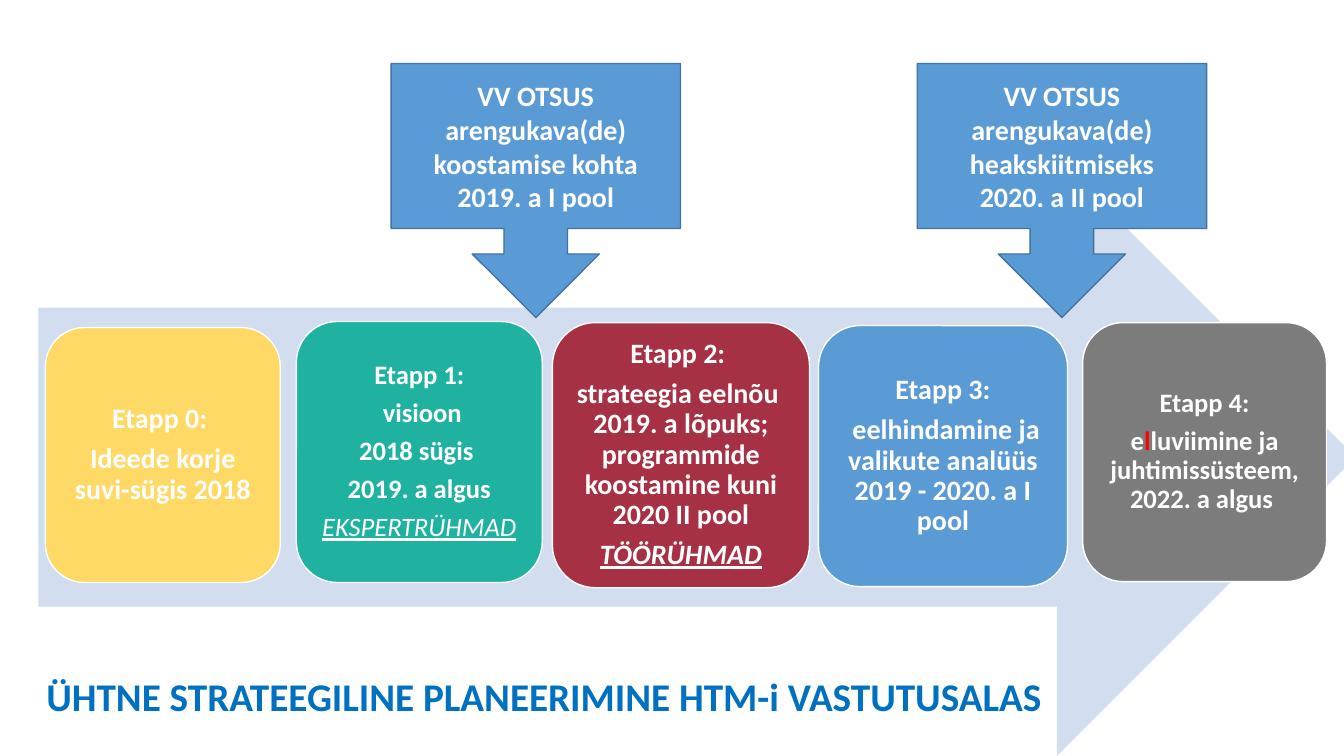
"""Build the slide that shows the stages of strategic planning as one timeline."""
from pptx import Presentation
from pptx.dml.color import RGBColor
from pptx.enum.shapes import MSO_SHAPE
from pptx.enum.text import MSO_ANCHOR, MSO_AUTO_SIZE, PP_ALIGN
from pptx.util import Inches, Pt

COLOURS = {
    "white": "FFFFFF",
    "title": "0070C0",
    "arrow": "D2DEEF",
    "yellow": "FFD966",
    "teal": "20B2A1",
    "crimson": "A63044",
    "blue": "5B9BD5",
    "grey": "7C7C7C",
    "outline": "43739E",
    "red": "FF0000",
}
FONT = "Calibri"
CALLOUT_TOP, CALLOUT_WIDTH, CALLOUT_HEIGHT = 8.4, 21.53, 33.6

STAGES = [
    ("yellow", 20, (3.38, 43.33, 17.48, 33.73),
     ["Etapp 0: ", "Ideede korje suvi-sügis 2018"]),
    ("teal", 19, (22.05, 42.53, 18.3, 34.53),
     ["Etapp 1:", " visioon", "2018 sügis ", "2019. a algus",
      [("EKSPERTRÜHMAD", {"bold": False, "italic": True, "underline": True})]]),
    ("crimson", 20, (41.1, 42.67, 19.13, 35.07),
     ["Etapp 2: ",
      "strateegia eelnõu \n2019. a lõpuks; programmide koostamine kuni 2020 II pool",
      [("TÖÖRÜHMAD", {"italic": True, "underline": True})]]),
    ("blue", 20, (60.9, 43.07, 18.53, 34.53),
     ["Etapp 3:", " eelhindamine ja valikute analüüs 2019 - 2020. a I pool"]),
    ("grey", 19, (80.55, 42.67, 18.15, 34.27),
     ["Etapp 4:",
      [("e", {}), ("l", {"colour": "red"}),
       ("luviimine ja juhtimissüsteem, 2022. a algus ", {})]]),
]
DECISIONS = [
    (68.25, ["VV OTSUS", "arengukava(de) heakskiitmiseks", "2020. a II pool"]),
    (29.1, ["VV OTSUS", "arengukava(de) koostamise kohta 2019. a I pool"]),
]


def add_span(para, text, size=20, colour="white", bold=True, italic=False, underline=False):
    """Append formatted text to a paragraph, with a line break at each newline."""
    for index, line in enumerate(text.split("\n")):
        if index:
            para.add_line_break()
        span = para.add_run()
        span.text = line
        font = span.font
        font.name, font.size = FONT, Pt(size)
        font.bold, font.italic, font.underline = bold, italic, underline
        font.color.rgb = RGBColor.from_string(COLOURS[colour])


class Timeline:
    """Draw on one slide, with places given in percent of its size."""

    def __init__(self, deck):
        """Add a title-only slide to the deck."""
        self.deck = deck
        self.slide = deck.slides.add_slide(deck.slide_layouts[5])

    def place(self, left, top, width, height):
        """Turn percentages into slide lengths."""
        across, down = self.deck.slide_width / 100, self.deck.slide_height / 100
        return [round(length) for length in
                (left * across, top * down, width * across, height * down)]

    def title(self, text, area):
        """Move and format the title placeholder."""
        box = self.slide.shapes.title
        box.left, box.top, box.width, box.height = self.place(*area)
        frame = box.text_frame
        frame.word_wrap = True
        frame.auto_size = MSO_AUTO_SIZE.SHAPE_TO_FIT_TEXT
        frame.vertical_anchor = MSO_ANCHOR.TOP
        para = frame.paragraphs[0]
        para.alignment = PP_ALIGN.LEFT
        add_span(para, text, size=28, colour="title")

    def shape(self, kind, area, fill, line=None):
        """Add a flat preset shape."""
        shape = self.slide.shapes.add_shape(kind, *self.place(*area))
        shape.shadow.inherit = False
        shape.fill.solid()
        shape.fill.fore_color.rgb = RGBColor.from_string(COLOURS[fill])
        if line:
            shape.line.color.rgb = RGBColor.from_string(COLOURS[line])
            shape.line.width = Pt(1)
        else:
            shape.line.fill.background()
        return shape

    def label(self, shape, paragraphs, size=20, spacing=1.0, after=0.0):
        """Fill a shape with centred paragraphs of strings or span lists."""
        frame = shape.text_frame
        frame.word_wrap = True
        frame.vertical_anchor = MSO_ANCHOR.MIDDLE
        for index, content in enumerate(paragraphs):
            para = frame.add_paragraph() if index else frame.paragraphs[0]
            para.alignment = PP_ALIGN.CENTER
            para.line_spacing, para.space_after = spacing, Pt(after)
            spans = [(content, {})] if isinstance(content, str) else content
            for text, style in spans:
                add_span(para, text, size=size, **style)

    def stage(self, fill, size, area, paragraphs):
        """Add a rounded card for one stage."""
        card = self.shape(MSO_SHAPE.ROUNDED_RECTANGLE, area, fill, "white")
        frame = card.text_frame
        frame.margin_left = frame.margin_right = Inches(0.08)
        frame.margin_top = frame.margin_bottom = Inches(0.08)
        self.label(card, paragraphs, size=size, spacing=0.9, after=0.35 * size)

    def decision(self, left, paragraphs):
        """Add a callout that points down at the timeline."""
        area = (left, CALLOUT_TOP, CALLOUT_WIDTH, CALLOUT_HEIGHT)
        callout = self.shape(MSO_SHAPE.DOWN_ARROW_CALLOUT, area, "blue", "outline")
        self.label(callout, paragraphs)


def main():
    """Create the deck and save it."""
    deck = Presentation()
    deck.slide_width, deck.slide_height = Inches(13.33), Inches(7.5)
    timeline = Timeline(deck)
    timeline.title("ÜHTNE STRATEEGILINE PLANEERIMINE HTM-i VASTUTUSALAS",
                   (2.7, 88.27, 95.55, 7.6))
    timeline.shape(MSO_SHAPE.RIGHT_ARROW, (2.85, 20.93, 98.03, 79.07), "arrow")
    for stage in STAGES:
        timeline.stage(*stage)
    for decision in DECISIONS:
        timeline.decision(*decision)
    deck.save("out.pptx")


if __name__ == "__main__":
    main()
